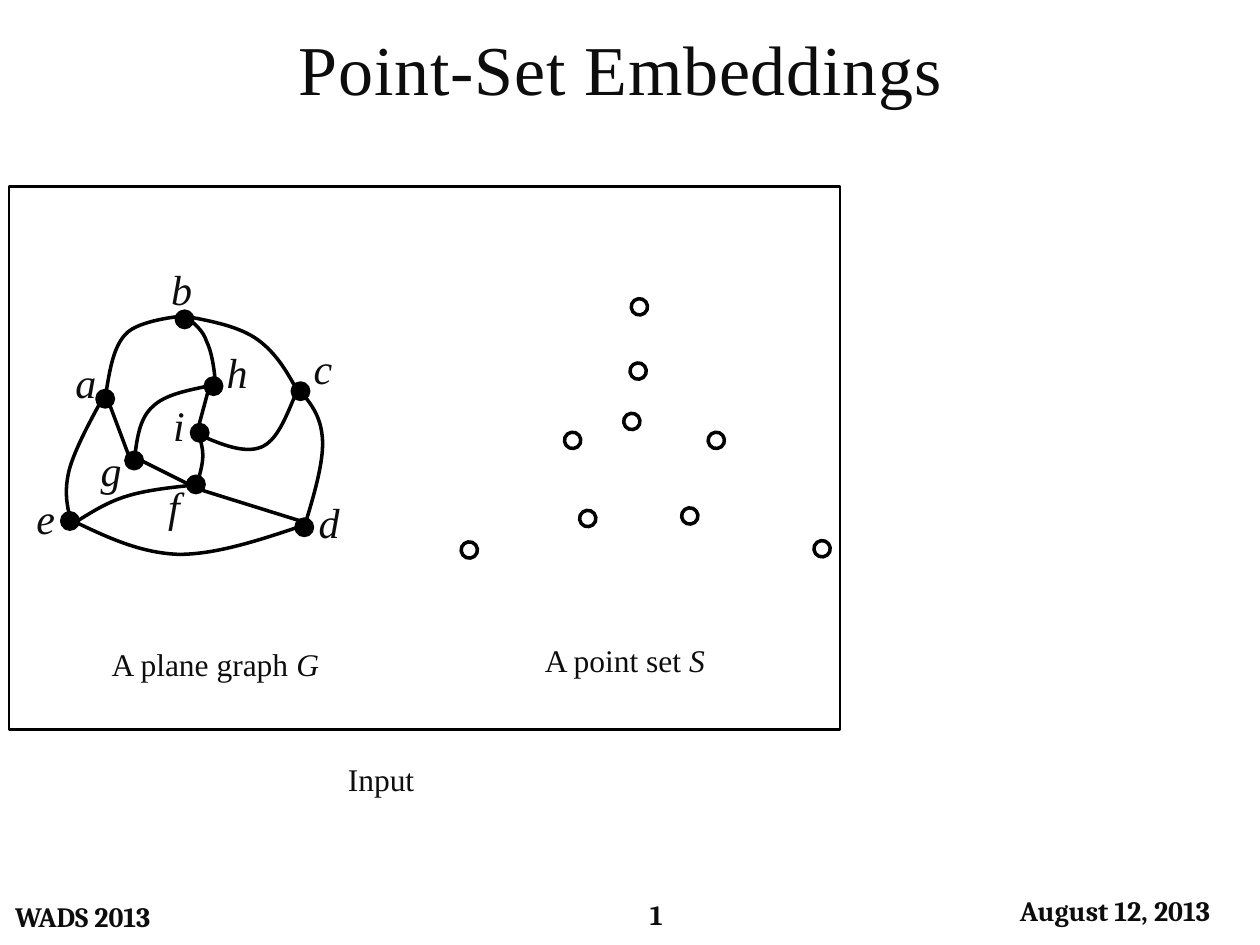
from dataclasses import dataclass

from lxml.etree import SubElement
from pptx import Presentation
from pptx.dml.color import RGBColor
from pptx.enum.shapes import MSO_CONNECTOR, MSO_SHAPE
from pptx.enum.text import MSO_ANCHOR, MSO_AUTO_SIZE, PP_ALIGN
from pptx.oxml.ns import qn
from pptx.util import Emu, Inches, Pt

SLIDE_WIDTH, SLIDE_HEIGHT = Inches(10), Inches(7.5)
COLUMNS, ROWS = 1000, 750
INK, TEXT = "000000", "0D0D0D"
SERIF, FOOTER_FONT = "Times New Roman", "Cambria"
DOT = 13
LABEL_WIDTH, LABEL_HEIGHT = 34, 30


@dataclass(frozen=True)
class Area:
    """A rectangle in grid columns and rows."""
    column: float
    row: float
    width: float
    height: float

    def emu(self) -> tuple:
        """Return left, top, width and height as lengths."""
        return (across(self.column), down(self.row),
                across(self.width), down(self.height))


@dataclass(frozen=True)
class Style:
    """The look of a piece of text."""
    size: float
    font: str = SERIF
    bold: bool = False
    italic: bool = False
    align: PP_ALIGN = PP_ALIGN.CENTER


@dataclass(frozen=True)
class Vertex:
    """A graph vertex: its dot corner and its label corner."""
    name: str
    dot: tuple
    label: tuple


@dataclass(frozen=True)
class Caption:
    """A line of text whose last part may be an italic symbol."""
    area: Area
    words: str
    symbol: str = ""


@dataclass(frozen=True)
class Footer:
    """One of the texts along the bottom edge."""
    area: Area
    words: str
    align: PP_ALIGN = PP_ALIGN.CENTER


TITLE = Area(0, 15, 1000, 77)
FRAME = Area(7, 148, 660, 431)
CAPTIONS = (
    Caption(Area(78, 507, 186, 40), "A plane graph ", "G"),
    Caption(Area(421, 504, 150, 40), "A point set ", "S"),
    Caption(Area(266, 598, 73, 40), "Input"),
)
FOOTERS = (
    Footer(Area(418, 708, 206, 35), "1"),
    Footer(Area(0, 705, 397, 45), "WADS 2013", PP_ALIGN.LEFT),
    Footer(Area(770, 705, 230, 35), "August 12, 2013"),
)
POINT_SET = ((460, 405), (366, 430), (500, 288), (448, 343), (646, 429),
             (541, 403), (501, 237), (562, 343), (495, 328))
VERTICES = (
    Vertex("a", (77, 310), (50, 288)),
    Vertex("b", (140, 247), (126, 214)),
    Vertex("c", (232, 304), (239, 277)),
    Vertex("d", (235, 412), (243, 399)),
    Vertex("e", (49, 407), (19, 396)),
    Vertex("f", (149, 378), (121, 386)),
    Vertex("g", (100, 359), (70, 358)),
    Vertex("h", (163, 300), (170, 280)),
    Vertex("i", (152, 337), (125, 322)),
)
STRAIGHT_EDGES = {
    "gf": ((113, 366), (149, 384)),
    "fd": ((160, 389), (237, 413)),
    "ga": ((102, 361), (87, 321)),
    "ih": ((158, 337), (165, 311)),
}
CURVED_EDGES = {
    "ea": ((56, 412), (53, 401), (51, 389), (55, 373), (59, 358), (70, 337), (81, 317)),
    "ab": ((84, 313), (87, 294), (90, 275), (100, 265), (110, 254), (144, 251), (144, 251)),
    "ef": ((59, 415), (72, 407), (84, 399), (100, 394), (116, 389), (135, 387), (154, 385)),
    "ed": ((57, 413), (84, 426), (111, 439), (142, 440), (173, 440), (208, 428), (244, 416)),
    "bc": ((147, 251), (168, 255), (190, 259), (205, 270), (220, 281), (229, 297), (238, 314)),
    "dc": ((241, 420), (249, 394), (257, 367), (256, 349), (255, 330), (246, 319), (237, 309)),
    "ic": ((158, 345), (176, 353), (194, 360), (207, 355), (220, 350), (227, 331), (235, 312)),
    "hb": ((171, 304), (170, 292), (168, 279), (164, 271), (161, 262), (155, 258), (150, 253)),
    "gh": ((107, 362), (109, 347), (111, 332), (121, 323), (131, 313), (149, 310), (167, 306)),
    "fi": ((157, 382), (159, 375), (161, 368), (161, 361), (161, 355), (159, 349), (157, 343)),
}


def across(columns: float) -> Emu:
    """Turn grid columns into a length."""
    return Emu(round(SLIDE_WIDTH * columns / COLUMNS))


def down(rows: float) -> Emu:
    """Turn grid rows into a length."""
    return Emu(round(SLIDE_HEIGHT * rows / ROWS))


def colour(code: str) -> RGBColor:
    """Turn a hex string into a colour."""
    return RGBColor.from_string(code)


def draw_outline(shape, weight: float) -> None:
    """Give a shape a plain line and neither fill nor shadow."""
    shape.shadow.inherit = False
    shape.fill.background()
    shape.line.color.rgb = colour(INK)
    shape.line.width = Pt(weight)


def write(box, words: str, style: Style, symbol: str = "") -> None:
    """Set and format the single paragraph of a box."""
    para = box.text_frame.paragraphs[0]
    para.text = words
    para.alignment = style.align
    if symbol:
        para.add_run().text = symbol
    for span in para.runs:
        span.font.size = Pt(style.size)
        span.font.name = style.font
        span.font.bold = style.bold
        span.font.italic = style.italic
        span.font.color.rgb = colour(TEXT)
    if symbol:
        para.runs[-1].font.italic = True


def draw_title(page) -> None:
    """Write the slightly letter-spaced heading."""
    box = page.shapes.add_textbox(*TITLE.emu())
    box.text_frame.word_wrap = True
    box.text_frame.auto_size = MSO_AUTO_SIZE.SHAPE_TO_FIT_TEXT
    write(box, "Point-Set Embeddings ", Style(40))
    for span in box.text_frame.paragraphs[0].runs:
        span.font._element.set("spc", "50")


def draw_caption(page, caption: Caption) -> None:
    """Write a caption that stays on one line."""
    box = page.shapes.add_textbox(*caption.area.emu())
    box.text_frame.word_wrap = False
    box.text_frame.auto_size = MSO_AUTO_SIZE.SHAPE_TO_FIT_TEXT
    write(box, caption.words, Style(18), caption.symbol)


def draw_footer(page, footer: Footer) -> None:
    """Write a footer in an unpainted rounded box."""
    box = page.shapes.add_shape(MSO_SHAPE.ROUNDED_RECTANGLE, *footer.area.emu())
    box.shadow.inherit = False
    box.fill.background()
    box.line.fill.background()
    box.text_frame.vertical_anchor = MSO_ANCHOR.MIDDLE
    write(box, footer.words, Style(16, FOOTER_FONT, bold=True, align=footer.align))


def draw_dot(shapes, corner: tuple, filled: bool) -> None:
    """Draw a solid vertex or a hollow point."""
    dot = shapes.add_shape(MSO_SHAPE.OVAL, *Area(*corner, DOT, DOT).emu())
    draw_outline(dot, 2)
    if filled:
        dot.fill.solid()
        dot.fill.fore_color.rgb = colour(INK)
    else:
        dot.rotation = 262.2


def draw_straight_edge(shapes, start: tuple, end: tuple) -> None:
    """Join two places with a straight connector."""
    edge = shapes.add_connector(MSO_CONNECTOR.STRAIGHT, across(start[0]), down(start[1]),
                                across(end[0]), down(end[1]))
    edge.line.color.rgb = colour(INK)
    edge.line.width = Pt(2)
    SubElement(edge._element.spPr, qn("a:effectLst"))


def draw_curved_edge(shapes, knots: tuple) -> None:
    """Draw cubic curves through a start and triples of knots."""
    places = [(across(column), down(row)) for column, row in knots]
    builder = shapes.build_freeform(*places[0])
    builder.add_line_segments(places[1:], close=False)
    edge = builder.convert_to_shape()
    draw_outline(edge, 2)
    track = next(edge._element.iter(qn("a:path")))
    segments = track.findall(qn("a:lnTo"))
    for first in range(0, len(segments), 3):
        curve = SubElement(track, qn("a:cubicBezTo"))
        for segment in segments[first:first + 3]:
            curve.append(segment[0])
            track.remove(segment)


def draw_label(shapes, vertex: Vertex) -> None:
    """Write the name of a vertex beside its dot."""
    box = shapes.add_textbox(*Area(*vertex.label, LABEL_WIDTH, LABEL_HEIGHT).emu())
    box.text_frame.word_wrap = True
    box.text_frame.vertical_anchor = MSO_ANCHOR.MIDDLE
    write(box, vertex.name, Style(24, italic=True))


def draw_graph(page) -> None:
    """Draw the plane graph as one group."""
    shapes = page.shapes.add_group_shape().shapes
    for vertex in VERTICES:
        draw_dot(shapes, vertex.dot, filled=True)
    for start, end in STRAIGHT_EDGES.values():
        draw_straight_edge(shapes, start, end)
    for knots in CURVED_EDGES.values():
        draw_curved_edge(shapes, knots)
    for vertex in VERTICES:
        draw_label(shapes, vertex)


def main() -> None:
    """Build the slide and save it."""
    deck = Presentation()
    deck.slide_width, deck.slide_height = SLIDE_WIDTH, SLIDE_HEIGHT
    page = deck.slides.add_slide(deck.slide_layouts[6])
    draw_title(page)
    for footer in FOOTERS:
        draw_footer(page, footer)
    for corner in POINT_SET:
        draw_dot(page.shapes, corner, filled=False)
    draw_outline(page.shapes.add_shape(MSO_SHAPE.RECTANGLE, *FRAME.emu()), 1.25)
    for caption in CAPTIONS:
        draw_caption(page, caption)
    draw_graph(page)
    deck.save("out.pptx")


if __name__ == "__main__":
    main()
